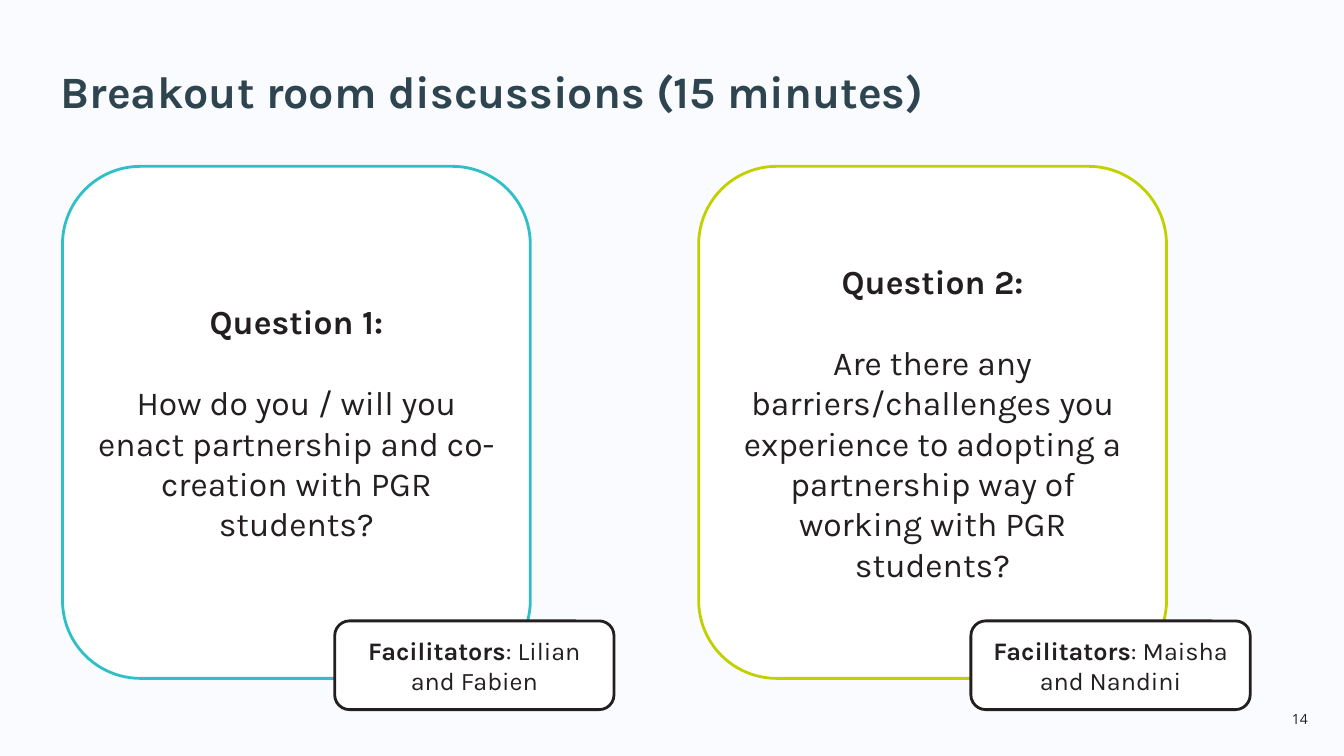
from dataclasses import dataclass

import pptx
import pptx.dml.color
import pptx.enum.shapes
import pptx.enum.text
import pptx.util

Inches = pptx.util.Inches
Pt = pptx.util.Pt
Align = pptx.enum.text.PP_ALIGN
Anchor = pptx.enum.text.MSO_ANCHOR


@dataclass(frozen=True)
class Theme:
    background: str = "F9FBFF"
    panel: str = "FFFFFF"
    ink: str = "231F20"
    heading: str = "2E444E"
    teal: str = "31BFC7"
    lime: str = "C1D100"
    font: str = "Karla"
    number_font: str = "Open Sans"
    title_size: int = 32
    question_size: int = 24
    facilitator_size: int = 18
    number_size: int = 10
    outline: int = 2


THEME = Theme()
QUESTIONS = [
    ("Question 1:", "How do you / will you enact partnership and co-creation with PGR students?",
     "Lilian and Fabien", THEME.teal),
    ("Question 2:", "Are there any barriers/challenges you experience to adopting a "
     "partnership way of working with PGR students?", "Maisha and Nandini", THEME.lime),
]


def rgb(value):
    return pptx.dml.color.RGBColor.from_string(value)


def style(span, size, color=THEME.ink, bold=False, font=THEME.font):
    span.font.name = font
    span.font.size = Pt(size)
    span.font.bold = bold
    span.font.color.rgb = rgb(color)


def add_title(page, text, left, top, width, height):
    title = page.shapes.title
    title.left, title.top = Inches(left), Inches(top)
    title.width, title.height = Inches(width), Inches(height)
    frame = title.text_frame
    frame.text = text
    frame.word_wrap = True
    frame.auto_size = pptx.enum.text.MSO_AUTO_SIZE.NONE
    frame.vertical_anchor = Anchor.TOP
    frame.paragraphs[0].alignment = Align.LEFT
    style(frame.paragraphs[0].runs[0], THEME.title_size, THEME.heading, True)


def add_panel(page, left, top, width, height, color):
    panel = page.shapes.add_shape(
        pptx.enum.shapes.MSO_SHAPE.ROUNDED_RECTANGLE,
        Inches(left), Inches(top), Inches(width), Inches(height))
    panel.shadow.inherit = False
    panel.fill.solid()
    panel.fill.fore_color.rgb = rgb(THEME.panel)
    panel.line.color.rgb = rgb(color)
    panel.line.width = Pt(THEME.outline)
    panel.text_frame.word_wrap = True
    panel.text_frame.vertical_anchor = Anchor.MIDDLE
    return panel.text_frame


def add_question(page, left, top, width, height, heading, question, names, color):
    frame = add_panel(page, left, top, width, height, color)
    frame.text = f"{heading}\n{question}"
    for para, bold in zip(frame.paragraphs, (True, False)):
        para.alignment = Align.CENTER
        style(para.runs[0], THEME.question_size, bold=bold)
    frame.paragraphs[1].space_before = Pt(29)

    frame = add_panel(page, left + 2.7, top + 4.51, 2.77, 0.88, THEME.ink)
    para = frame.paragraphs[0]
    para.alignment = Align.CENTER
    for text, bold in (("Facilitators", True), (f": {names}", False)):
        span = para.add_run()
        span.text = text
        style(span, THEME.facilitator_size, bold=bold)


def add_page_number(page, number, left, top, width, height):
    box = page.shapes.add_textbox(Inches(left), Inches(top), Inches(width), Inches(height))
    frame = box.text_frame
    frame.word_wrap = True
    frame.text = number
    frame.paragraphs[0].alignment = Align.RIGHT
    style(frame.paragraphs[0].runs[0], THEME.number_size, font=THEME.number_font)


def main():
    deck = pptx.Presentation()
    deck.slide_width, deck.slide_height = Inches(13.33), Inches(7.5)
    page = deck.slides.add_slide(deck.slide_layouts[5])
    page.background.fill.solid()
    page.background.fill.fore_color.rgb = rgb(THEME.background)
    add_title(page, "Breakout room discussions (15 minutes)", 0.5, 0.58, 9.52, 0.64)
    for index, content in enumerate(QUESTIONS):
        add_question(page, 0.62 + index * 6.31, 1.65, 4.64, 5.08, *content)
    add_page_number(page, "14", 12.02, 7, 1.05, 0.27)
    deck.save("out.pptx")


if __name__ == "__main__":
    main()
